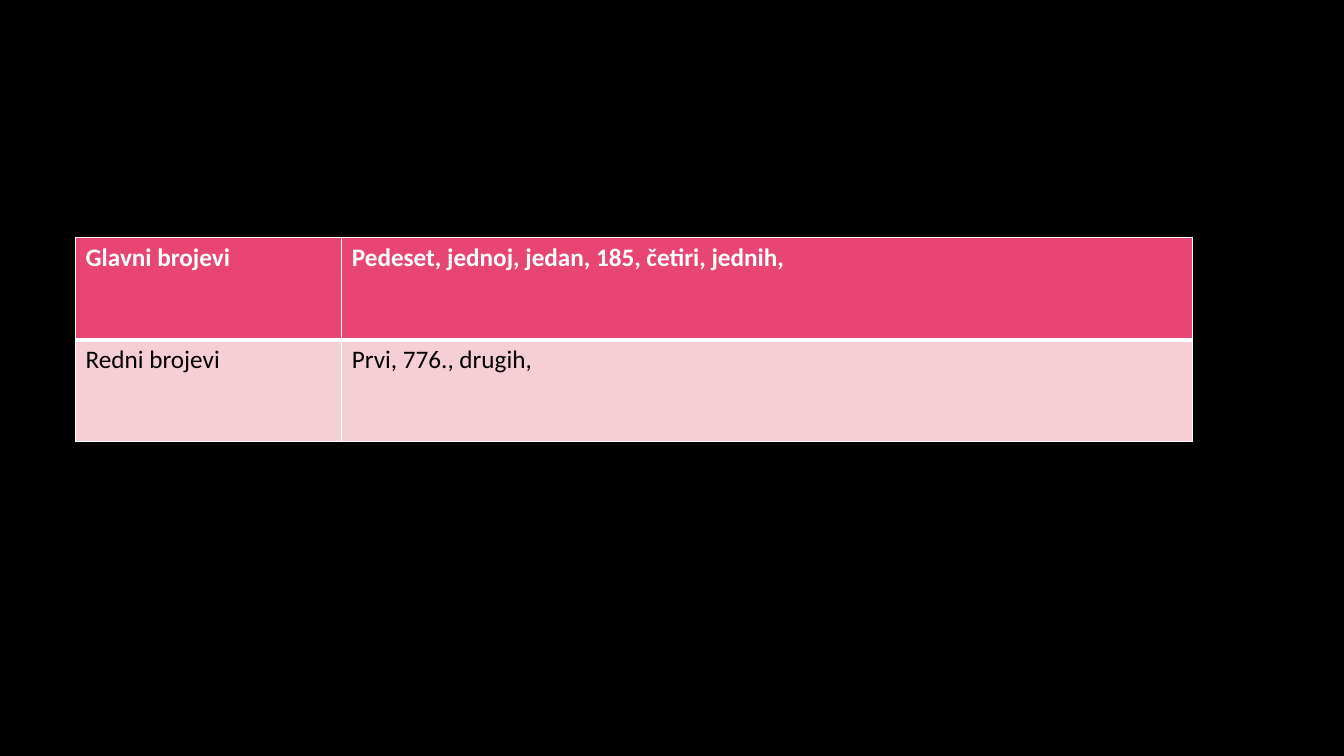
from lxml.etree import SubElement
from pptx import Presentation
from pptx.dml.color import RGBColor
from pptx.oxml.ns import qn
from pptx.util import Inches, Pt

NUMBER_KINDS = [
    ("Glavni brojevi", "Pedeset, jednoj, jedan, 185, četiri, jednih,"),
    ("Redni brojevi", "Prvi, 776., drugih,"),
]
ROW_STYLES = [
    {"fill": "E84574", "text": "FFFFFF", "bold": True,
     "borders": {"lnL": 1, "lnR": 1, "lnT": 1, "lnB": 3}},
    {"fill": "F6CFD6", "text": "000000", "bold": False,
     "borders": {"lnL": 1, "lnR": 1, "lnT": 3, "lnB": 1}},
]
BACKGROUND = "000000"
BORDER = "FFFFFF"
LEFT, TOP = 0.75, 2.36
COLUMN_WIDTHS = [2.64, 8.44]
ROW_HEIGHT = 1.01


def paint(fill, color):
    fill.solid()
    fill.fore_color.rgb = RGBColor.from_string(color)


def add_borders(cell, borders):
    properties = cell._tc.get_or_add_tcPr()
    for position, (side, width) in enumerate(borders.items()):
        line = SubElement(properties, qn(f"a:{side}"), w=str(Pt(width)))
        properties.insert(position, line)
        solid = SubElement(line, qn("a:solidFill"))
        SubElement(solid, qn("a:srgbClr"), val=BORDER)


def fill_cell(cell, wording, style):
    cell.text_frame.text = wording
    font = cell.text_frame.paragraphs[0].runs[0].font
    font.name = "Calibri"
    font.size = Pt(18)
    font.bold = style["bold"]
    paint(font.fill, style["text"])
    paint(cell.fill, style["fill"])
    add_borders(cell, style["borders"])


def main():
    presentation = Presentation()
    presentation.slide_width = Inches(13.33)
    presentation.slide_height = Inches(7.5)
    slide = presentation.slides.add_slide(presentation.slide_layouts[6])
    paint(slide.background.fill, BACKGROUND)

    numbers = slide.shapes.add_table(
        len(NUMBER_KINDS), len(COLUMN_WIDTHS), Inches(LEFT), Inches(TOP),
        Inches(sum(COLUMN_WIDTHS)), Inches(ROW_HEIGHT * len(NUMBER_KINDS)),
    ).table
    for column, width in zip(numbers.columns, COLUMN_WIDTHS):
        column.width = Inches(width)
    for row, kind, style in zip(numbers.rows, NUMBER_KINDS, ROW_STYLES):
        row.height = Inches(ROW_HEIGHT)
        for cell, wording in zip(row.cells, kind):
            fill_cell(cell, wording, style)

    presentation.save("out.pptx")


if __name__ == "__main__":
    main()
